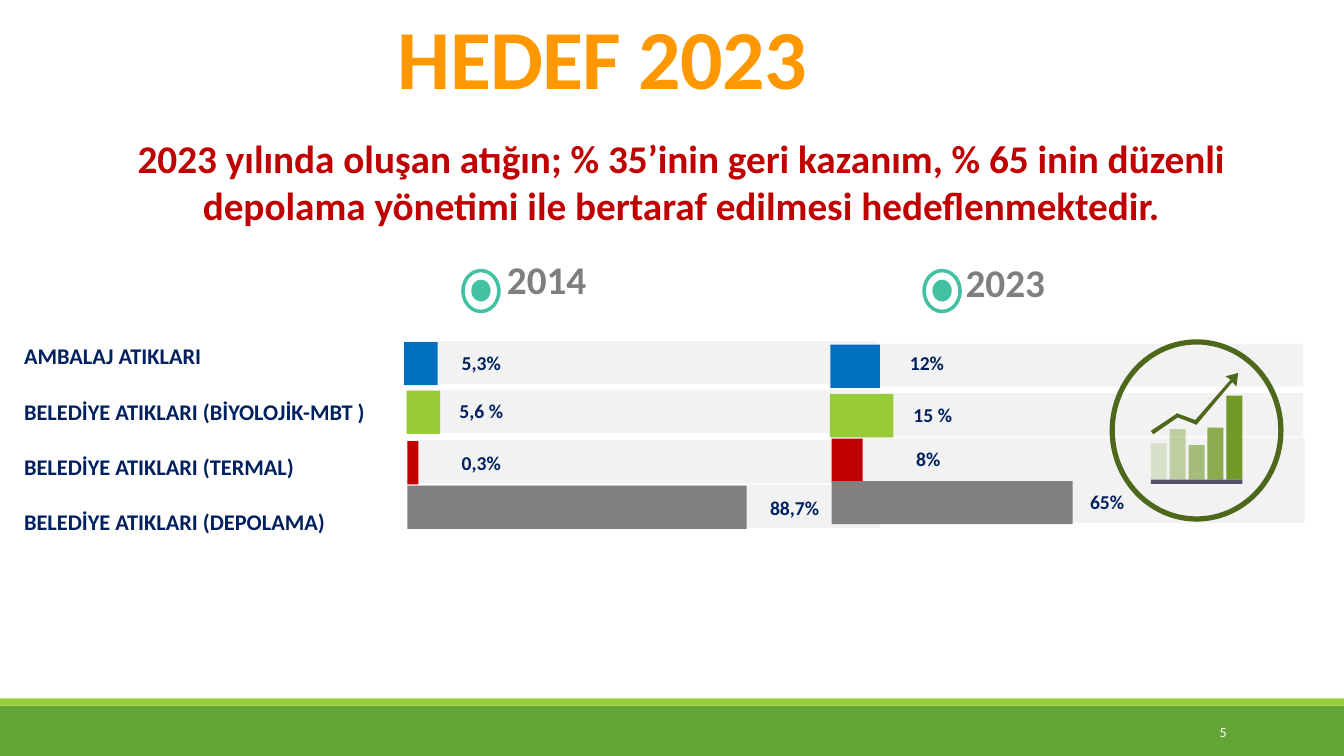
from lxml.etree import SubElement
from pptx import Presentation
from pptx.dml.color import RGBColor
from pptx.enum.shapes import MSO_SHAPE as Preset
from pptx.enum.text import MSO_ANCHOR as Anchor, PP_ALIGN as Align
from pptx.oxml.ns import qn
from pptx.util import Inches, Pt

COLUMNS, ROWS = 160, 90
NAVY, GREY, TEAL, OLIVE, LEAF = "002060", "808080", "44C1A3", "4D671B", "739A28"
LIME, RED = "99CB38", "C00000"

deck = Presentation()
deck.slide_width, deck.slide_height = Inches(13.333), Inches(7.5)
slide = deck.slides.add_slide(deck.slide_layouts[6])
cell = deck.slide_height / ROWS  # the grid cells are square


def paint(preset, left, top, width, height, color):
    """Place a borderless preset shape, measured in grid cells."""
    shape = slide.shapes.add_shape(
        preset, *(round(n * cell) for n in (left, top, width, height)))
    shape.shadow.inherit = False
    shape.fill.solid()
    shape.fill.fore_color.rgb = RGBColor.from_string(color)
    shape.line.fill.background()
    return shape


def write(frame, text, size, color, bold=True, align=Align.LEFT, inset=(0.1, 0.05), gap=0):
    """Write one paragraph per line, gap points apart; inset is (sides, ends) in inches."""
    frame.word_wrap = True
    frame.margin_left = frame.margin_right = Inches(inset[0])
    frame.margin_top = frame.margin_bottom = Inches(inset[1])
    for index, line in enumerate(text.split("\n")):
        paragraph = frame.add_paragraph() if index else frame.paragraphs[0]
        paragraph.alignment = align
        if index:
            paragraph.space_before = Pt(gap)
        run = paragraph.add_run()
        run.text = line
        run.font.name, run.font.size, run.font.bold = "Calibri", Pt(size), bold
        run.font.color.rgb = RGBColor.from_string(color)
    return paragraph


# Footer
paint(Preset.RECTANGLE, 0, 84, COLUMNS, 6, "63A537")
paint(Preset.RECTANGLE, 0, 83.16, COLUMNS, 0.84, LIME)

# Waste shares per year: left, top, bar width, left and top of the value, value
waste_colors = ["0070C0", LIME, RED, GREY]
years = [
    ("2014", 54.9, 58.8, 29.5, [
        (48.1, 40.6, 4, 51.6, 41.15, "5,3%"),
        (48.4, 46.4, 4, 51.6, 46.95, "5,6 %"),
        (48.5, 52.4, 1.3, 51.6, 53.05, "0,3%"),
        (48.5, 57.7, 40.4, 88.9, 58.45, "88,7%")]),
    ("2023", 109.8, 113.4, 29.95, [
        (98.85, 40.9, 5.9, 104.65, 41.2, "12%"),
        (98.8, 46.8, 7.55, 105.35, 47.35, "15 %"),
        (99, 52.1, 3.7, 104.8, 52.6, "8%"),
        (99, 57.15, 28.7, 126.1, 57.75, "65%")]),
]
texts = []
for year, marker_left, year_left, year_top, shares in years:
    for left, top, *_ in shares:
        paint(Preset.RECTANGLE, left, top, 56.3, 5.15, "F2F2F2")
    for (left, top, width, value_left, value_top, value), color in zip(shares, waste_colors):
        paint(Preset.RECTANGLE, left, top + 0.12, width, 5.15, color)
        texts.append((value_left, value_top, 11.4, 4.1, value, 14, NAVY, True, Align.CENTER))
    paint(Preset.OVAL, marker_left + 1.2, 33.3, 2.3, 2.6, TEAL)
    paint(Preset.DONUT, marker_left, 32, 4.7, 5.3, TEAL).adjustments[0] = 0.09
    texts.append((year_left, year_top, 16.6, 7.3, year, 28, "7F7F7F", True, Align.LEFT,
                  (0.13, 0.07)))

# Waste types: text, row height, anchor
waste_types = [
    ("AMBALAJ ATIKLARI", 6, Anchor.TOP),
    ("BELEDİYE ATIKLARI (BİYOLOJİK-MBT )\nBELEDİYE ATIKLARI (TERMAL)", 11, Anchor.MIDDLE),
    ("", 2.7, Anchor.MIDDLE),
    ("BELEDİYE ATIKLARI (DEPOLAMA)", 3.3, Anchor.MIDDLE),
]
labels = slide.shapes.add_table(
    len(waste_types), 1, *(round(n * cell) for n in (2.75, 40.9, 43.1, 23))).table
labels.first_row = labels.horz_banding = False
for row, (waste_type, height, anchor) in enumerate(waste_types):
    labels.rows[row].height = round(height * cell)
    label = labels.cell(row, 0)
    label.fill.background()
    label.vertical_anchor = anchor
    label.margin_left = label.margin_right = Inches(0.01)
    label.margin_top = label.margin_bottom = 0
    if waste_type:
        write(label.text_frame, waste_type, 16, NAVY, inset=(0.01, 0), gap=19.5)
    else:
        SubElement(label.text_frame.paragraphs[0]._p, qn("a:endParaRPr"), sz="1200")

# Growth badge: ring, columns that grow stronger, base line and rising arrow
paint(Preset.DONUT, 132.1, 40.4, 20.7, 21.7, OLIVE).adjustments[0] = 0.03
base = 57.1
for step, height in enumerate([4.3, 6, 4.1, 6.2, 10]):
    column = paint(Preset.RECTANGLE, 137 + 2.25 * step, base - height, 1.9, height, LEAF)
    tint = column.fill._xPr.find(qn("a:solidFill"))[0]
    SubElement(tint, qn("a:alpha"), val=str(20000 * (step + 1)))
paint(Preset.RECTANGLE, 137, base, 10.9, 0.5, "525068")

# The arrow is drawn in tenths of a cell
arrow_outline = [
    (1474, 444), (1472, 460), (1467, 455), (1425, 505), (1424, 506), (1423, 505),
    (1402, 497), (1373, 517), (1370, 513), (1400, 493), (1401, 492), (1423, 500),
    (1465, 452), (1459, 448),
]
pen = slide.shapes.build_freeform(*arrow_outline[0], scale=cell / 10)
pen.add_line_segments(arrow_outline[1:], close=True)
arrow = pen.convert_to_shape()
arrow.shadow.inherit = False
arrow.fill.solid()
arrow.fill.fore_color.rgb = RGBColor.from_string(OLIVE)
arrow.line.fill.background()

# Texts
statement = ("2023 yılında oluşan atığın; % 35’inin geri kazanım, % 65 inin düzenli "
             "depolama yönetimi ile bertaraf edilmesi hedeflenmektedir.")
texts += [
    (130, 84.7, 17.2, 4.8, "5", 10, "FFFFFF", False, Align.RIGHT),
    (5.65, 15.2, 150.85, 13, statement, 28, RED, True, Align.CENTER, (0.13, 0.07)),
    (5.85, 1.9, 131.75, 11.6, "HEDEF 2023", 60, "FF9800", True, Align.CENTER),
]
for left, top, width, height, *content in texts:
    box = slide.shapes.add_textbox(*(round(n * cell) for n in (left, top, width, height)))
    line = write(box.text_frame, *content)
    if content[0] == "5":
        box.text_frame.vertical_anchor = Anchor.MIDDLE
    if content[0] == "HEDEF 2023":
        line.line_spacing = 0.85
        line.runs[0].font._element.set("spc", "-50")

deck.save("out.pptx")
